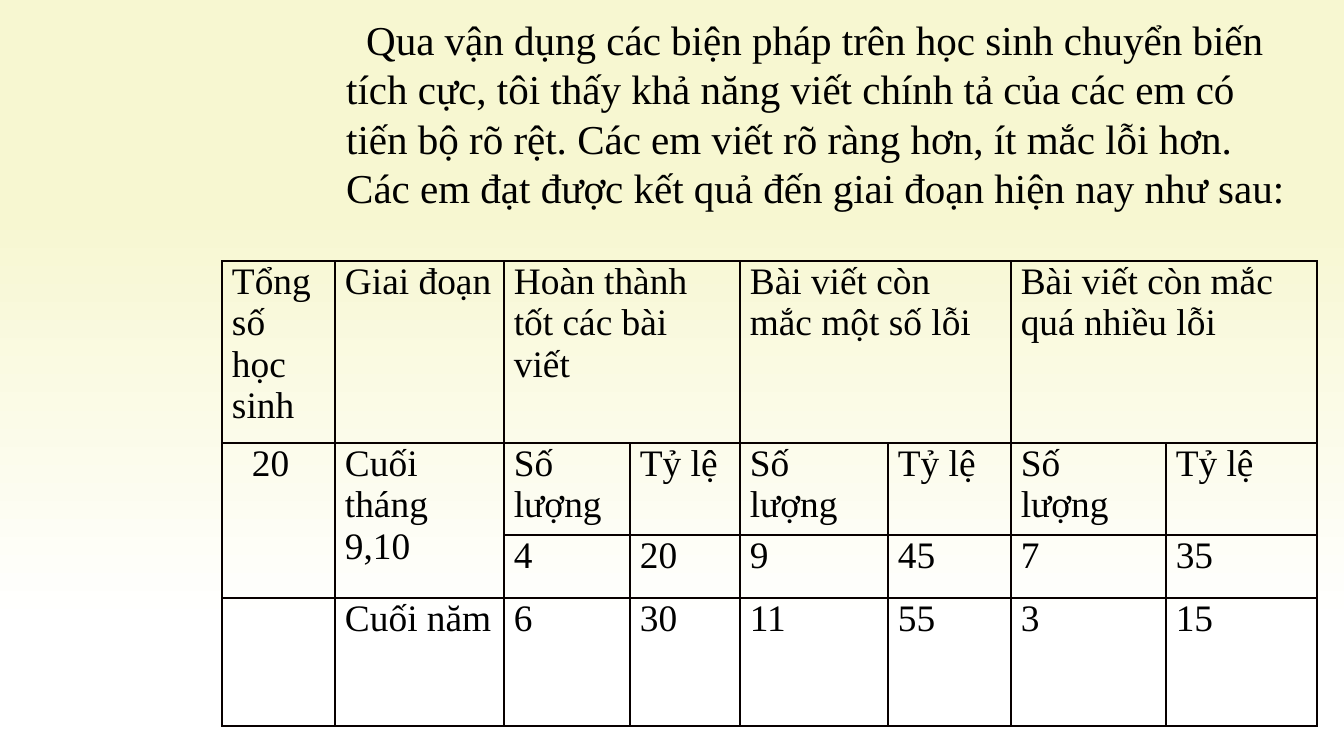
"""Build the slide on pupils' spelling results, with a summary text and a results table."""
from dataclasses import dataclass

import lxml.etree
import pptx
import pptx.dml.color
import pptx.oxml.ns
import pptx.util

EMU_PER_PX = 914400 / 134.4
FONT = "Times New Roman"
INK = "000000"
BORDER = "080000"
COLUMN_WIDTHS = [113, 169, 126, 110, 148, 123, 155, 151]
ROW_HEIGHTS = [182, 92, 63, 92, 36]
INDENT = 20


@dataclass
class Entry:
    row: int
    column: int
    text: str
    rows: int = 1
    columns: int = 1
    indent: int = 0


def px(length: int) -> pptx.util.Emu:
    return pptx.util.Emu(round(length * EMU_PER_PX))


def colour(value: str) -> pptx.dml.color.RGBColor:
    return pptx.dml.color.RGBColor.from_string(value)


def write(frame, text: str, size: int, indent: int = 0) -> None:
    paragraph = frame.paragraphs[0]
    if indent:
        paragraph._p.get_or_add_pPr().set("indent", str(px(indent)))
    run = paragraph.add_run()
    run.text = text
    run.font.name = FONT
    run.font.size = pptx.util.Pt(size)
    run.font.color.rgb = colour(INK)


def add_child(parent, tag: str, **attributes: str):
    return lxml.etree.SubElement(parent, pptx.oxml.ns.qn(tag), attributes)


def style_cell(cell, open_sides: str) -> None:
    cell.margin_left = cell.margin_right = px(10)
    cell.margin_top = cell.margin_bottom = 0
    properties = cell._tc.get_or_add_tcPr()
    for side in "LRTB":
        line = add_child(properties, f"a:ln{side}", w=str(pptx.util.Pt(1)))
        if side in open_sides:
            add_child(line, "a:noFill")
        else:
            add_child(add_child(line, "a:solidFill"), "a:srgbClr", val=BORDER)
    cell.fill.background()
    if not cell.text_frame.text:
        add_child(cell.text_frame.paragraphs[0]._p, "a:endParaRPr", sz="1000")


def result_entries() -> list[Entry]:
    entries = [
        Entry(0, 0, "Tổng số học sinh"),
        Entry(0, 1, "Giai đoạn"),
        Entry(1, 0, "20", rows=2, indent=INDENT),
        Entry(1, 1, "Cuối tháng 9,10", rows=2),
        Entry(3, 1, "Cuối năm"),
    ]
    levels = [
        ("Hoàn thành tốt các bài viết", ("4", "20"), ("6", "30")),
        ("Bài viết còn mắc một số lỗi", ("9", "45"), ("11", "55")),
        ("Bài viết còn mắc quá nhiều lỗi", ("7", "35"), ("3", "15")),
    ]
    for index, (heading, autumn, year_end) in enumerate(levels):
        first = 2 + 2 * index
        entries.append(Entry(0, first, heading, columns=2))
        for offset, measure in enumerate(("Số lượng", "Tỷ lệ")):
            column = first + offset
            entries.append(Entry(1, column, measure))
            entries.append(Entry(2, column, autumn[offset]))
            entries.append(Entry(3, column, year_end[offset], rows=2))
    return entries


def add_results(slide) -> None:
    frame = slide.shapes.add_table(
        len(ROW_HEIGHTS), len(COLUMN_WIDTHS), px(222), px(261),
        px(sum(COLUMN_WIDTHS)), px(sum(ROW_HEIGHTS)))
    results = frame.table
    results.first_row = results.horz_banding = False
    for column, width in zip(results.columns, COLUMN_WIDTHS):
        column.width = px(width)
    for row, height in zip(results.rows, ROW_HEIGHTS):
        row.height = px(height)
    for entry in result_entries():
        cell = results.cell(entry.row, entry.column)
        if entry.rows * entry.columns > 1:
            cell.merge(results.cell(entry.row + entry.rows - 1,
                                    entry.column + entry.columns - 1))
        write(cell.text_frame, entry.text, 20, entry.indent)
    for row in range(len(ROW_HEIGHTS)):
        for column in range(len(COLUMN_WIDTHS)):
            open_sides = {3: "B", 4: "T"}.get(row, "") if column < 2 else ""
            style_cell(results.cell(row, column), open_sides)


def add_summary(slide) -> None:
    summary = slide.shapes.add_textbox(px(333), px(8), px(965), px(262)).text_frame
    summary.word_wrap = True
    write(summary, "Qua vận dụng các biện pháp trên học sinh chuyển biến tích cực, "
          "tôi thấy khả năng viết chính tả của các em có tiến bộ rõ rệt. "
          "Các em viết rõ ràng hơn, ít mắc lỗi hơn. "
          "Các em đạt được kết quả đến giai đoạn hiện nay như sau:", 22, INDENT)


def paint_background(slide) -> None:
    fill = slide.background.fill
    fill.gradient()
    fill.gradient_angle = 270
    for stop, (position, shade) in zip(fill.gradient_stops,
                                       [(0.28, "F7F7D1"), (0.83, "FFFFFF")]):
        stop.position = position
        stop.color.rgb = colour(shade)


def main() -> None:
    deck = pptx.Presentation()
    deck.slide_width, deck.slide_height = px(1344), px(756)
    slide = deck.slides.add_slide(deck.slide_layouts[6])
    paint_background(slide)
    add_summary(slide)
    add_results(slide)
    deck.save("out.pptx")


if __name__ == "__main__":
    main()
